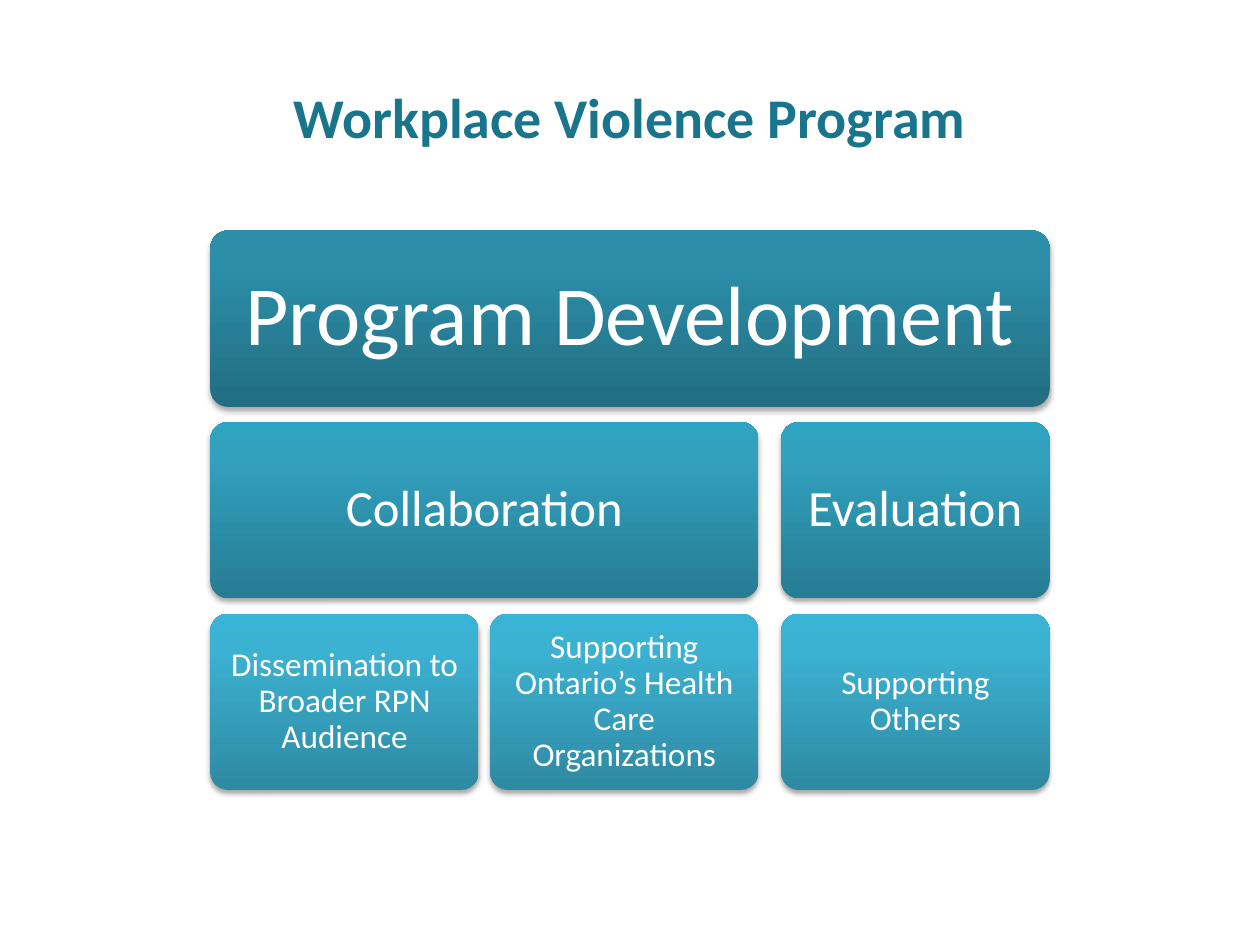
from copy import deepcopy
from dataclasses import dataclass

from lxml.etree import SubElement
from pptx import Presentation
from pptx.dml.color import RGBColor
from pptx.enum.shapes import MSO_SHAPE
from pptx.enum.text import MSO_ANCHOR, PP_ALIGN
from pptx.oxml.ns import qn
from pptx.slide import Slide
from pptx.util import Inches, Pt

COLORS = {
    "title": "19758B",
    "text": "FFFFFF",
    "shadow": "000000",
    "dark_low": "226D81", "dark_mid": "2C8EA8", "dark_high": "2A90AB",
    "medium_low": "267C93", "medium_mid": "32A1BE", "medium_high": "2FA3C2",
    "light_low": "2E89A2", "light_mid": "3CB2D2", "light_high": "3AB4D6",
}
FONT = "Calibri"
COLUMN_LEFTS = (1.67, 3.89, 6.2)
COLUMN_WIDTH = 2.13
TOP, ROW_PITCH, ROW_HEIGHT = 1.83, 1.52, 1.4


@dataclass(frozen=True)
class Level:
    row: int
    tone: str
    size: int
    inset: float


@dataclass(frozen=True)
class Block:
    label: str
    level: Level
    first_column: int
    last_column: int


PROGRAM = Level(0, "dark", 48, 0.2)
AREA = Level(1, "medium", 29, 0.12)
ACTIVITY = Level(2, "light", 19, 0.08)

BLOCKS = (
    Block("Program Development", PROGRAM, 0, 2),
    Block("Collaboration", AREA, 0, 1),
    Block("Dissemination to Broader RPN Audience", ACTIVITY, 0, 0),
    Block("Supporting Ontario’s Health Care Organizations", ACTIVITY, 1, 1),
    Block("Evaluation", AREA, 2, 2),
    Block("Supporting Others", ACTIVITY, 2, 2),
)


def rgb(name: str) -> RGBColor:
    """Return the named palette colour."""
    return RGBColor.from_string(COLORS[name])


def apply_gradient(shape, tone: str) -> None:
    """Fill the shape from its low tone at the bottom to its high tone at the top."""
    shape.fill.gradient()
    shape.fill.gradient_angle = 90
    stop_list = shape._element.spPr.find(qn("a:gradFill")).find(qn("a:gsLst"))
    stop_list.append(deepcopy(stop_list[-1]))
    levels = (("low", 0), ("mid", 0.8), ("high", 1))
    for stop, (shade, position) in zip(shape.fill.gradient_stops, levels):
        stop.position = position
        stop.color.rgb = rgb(f"{tone}_{shade}")


def apply_shadow(shape) -> None:
    """Give the shape a soft shadow that falls downwards."""
    shape.shadow.inherit = False
    effects = shape._element.spPr.find(qn("a:effectLst"))
    shadow = SubElement(effects, qn("a:outerShdw"), blurRad=str(Pt(3.1)),
                        dist=str(Pt(1.8)), dir="5400000", rotWithShape="0")
    color = SubElement(shadow, qn("a:srgbClr"), val=COLORS["shadow"])
    SubElement(color, qn("a:alpha"), val="35000")


def draw_block(slide: Slide, block: Block) -> None:
    """Draw one labelled block across its columns."""
    level = block.level
    left = COLUMN_LEFTS[block.first_column]
    width = COLUMN_LEFTS[block.last_column] + COLUMN_WIDTH - left
    shape = slide.shapes.add_shape(
        MSO_SHAPE.ROUNDED_RECTANGLE, Inches(left), Inches(TOP + level.row * ROW_PITCH),
        Inches(width), Inches(ROW_HEIGHT))
    shape.adjustments[0] = 0.1
    apply_gradient(shape, level.tone)
    shape.line.fill.background()
    apply_shadow(shape)

    frame = shape.text_frame
    frame.word_wrap = True
    frame.vertical_anchor = MSO_ANCHOR.MIDDLE
    frame.margin_left = frame.margin_right = Inches(level.inset)
    frame.margin_top = frame.margin_bottom = Inches(level.inset)
    label = frame.paragraphs[0]
    label.text = block.label
    label.alignment = PP_ALIGN.CENTER
    label.line_spacing = 0.9
    label.font.name = FONT
    label.font.size = Pt(level.size)
    label.font.color.rgb = rgb("text")


def draw_title(slide: Slide, text: str) -> None:
    """Write the slide title in its placeholder."""
    title = slide.shapes.title
    title.left, title.top = Inches(0.5), Inches(0.3)
    title.width, title.height = Inches(9), Inches(1.25)
    title.text_frame.vertical_anchor = MSO_ANCHOR.MIDDLE
    heading = title.text_frame.paragraphs[0]
    heading.text = text
    heading.alignment = PP_ALIGN.CENTER
    heading.font.name = FONT
    heading.font.size = Pt(32)
    heading.font.bold = True
    heading.font.color.rgb = rgb("title")


def main() -> None:
    """Build and save the slide."""
    deck = Presentation()
    deck.slide_width, deck.slide_height = Inches(10), Inches(7.5)
    slide = deck.slides.add_slide(deck.slide_layouts[5])
    draw_title(slide, "Workplace Violence Program")
    for block in BLOCKS:
        draw_block(slide, block)
    deck.save("out.pptx")


if __name__ == "__main__":
    main()
